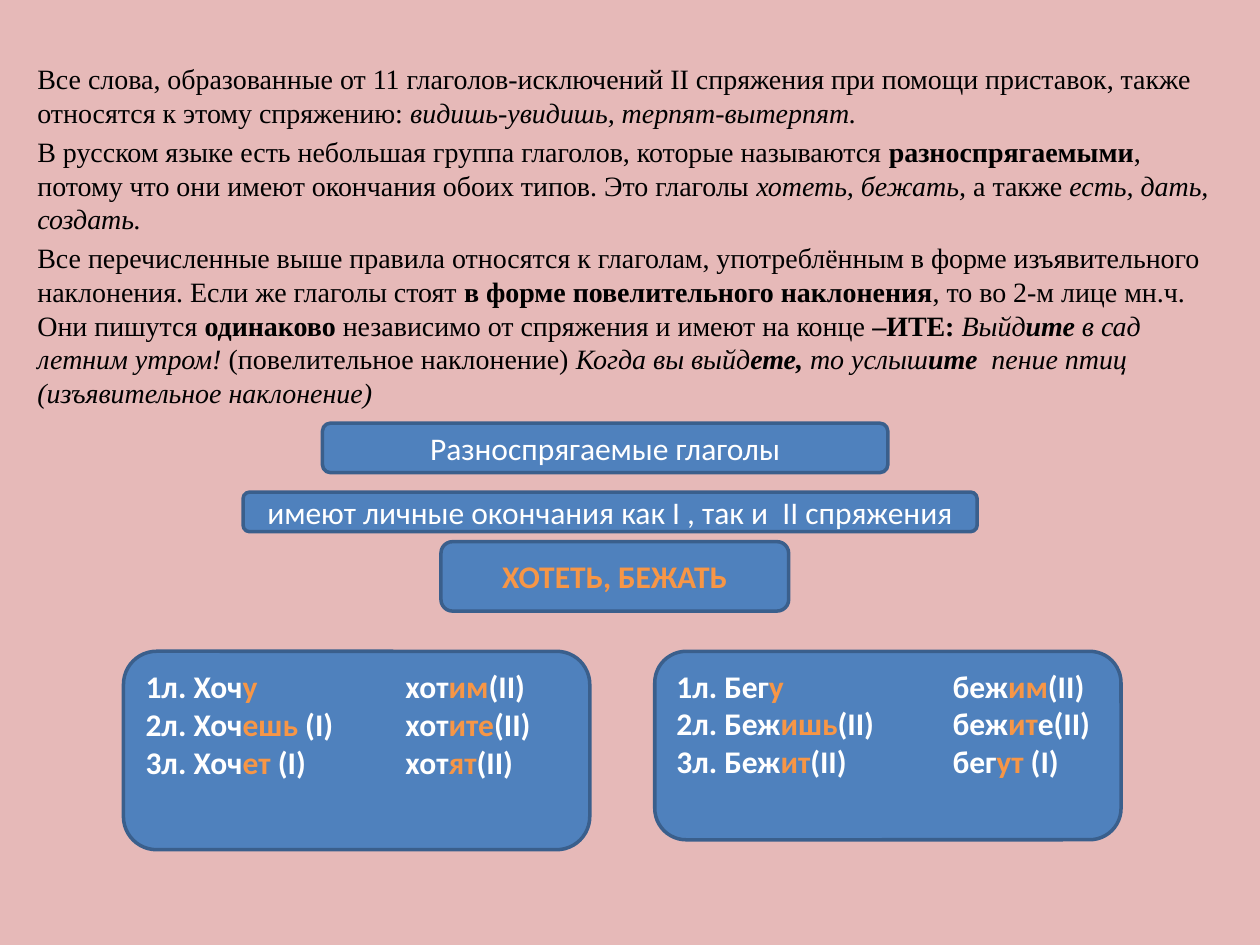
from pptx import Presentation
from pptx.dml.color import RGBColor
from pptx.enum.shapes import MSO_SHAPE
from pptx.enum.text import MSO_ANCHOR, MSO_AUTO_SIZE, PP_ALIGN
from pptx.oxml.ns import qn
from pptx.util import Cm, Pt
from lxml import etree

ROUNDED = MSO_SHAPE.ROUNDED_RECTANGLE
TOP, MIDDLE = MSO_ANCHOR.TOP, MSO_ANCHOR.MIDDLE
LEFT, CENTER = PP_ALIGN.LEFT, PP_ALIGN.CENTER
NO_AUTOFIT = MSO_AUTO_SIZE.NONE

PINK, BLUE, NAVY = "E6B9B8", "4F81BD", "3A5F8C"
WHITE, ORANGE, BLACK = "FFFFFF", "F79646", "000000"

RULES = [
    [("Все слова, образованные от 11 глаголов-исключений II спряжения при помощи приставок, "
      "также относятся к этому спряжению: ", ""),
     ("видишь-увидишь, терпят-вытерпят.", "i")],
    [("В русском языке есть небольшая группа глаголов, которые называются ", ""),
     ("разноспрягаемыми", "b"),
     (", потому что они имеют окончания обоих типов. Это глаголы ", ""),
     ("хотеть, бежать, ", "i"), ("а также ", ""), ("есть, дать, создать.", "i")],
    [("Все перечисленные выше правила относятся к глаголам, употреблённым в форме "
      "изъявительного наклонения. Если же глаголы стоят ", ""),
     ("в форме повелительного наклонения", "b"),
     (", то во 2-м лице мн.ч. Они пишутся ", ""), ("одинаково ", "b"),
     ("независимо от спряжения и имеют на конце ", ""), ("–ИТЕ: ", "b"),
     ("Выйд", "i"), ("ите", "bi"), (" в сад летним утром! ", "i"),
     ("(повелительное наклонение) ", ""), ("Когда вы выйд", "i"), ("ете, ", "bi"),
     ("то услыш", "i"), ("ите ", "bi"),
     (" пение птиц (изъявительное наклонение)", "i")],
]

BANNERS = [
    ("Разноспрягаемые глаголы", (6.5, 8.53, 11.4, 1.0), WHITE, False),
    ("имеют личные окончания как I , так и  II спряжения", (4.9, 9.92, 14.8, 0.8), WHITE, False),
    ("ХОТЕТЬ, БЕЖАТЬ", (8.89, 10.92, 7.01, 1.4), ORANGE, True),
]

VERBS = [
    ((2.49, 13.13, 9.4, 4.0), 5.24,
     ["1л. Хоч|у|\tхот|им|(II)", "2л. Хоч|ешь| (I)\tхот|ите|(II)", "3л. Хоч|ет| (I)\tхот|ят|(II)"]),
    ((13.2, 13.13, 9.4, 3.8), 5.57,
     ["1л. Бег|у|\tбеж|им|(II)", "2л. Беж|ишь|(II)\tбеж|ит|е(II)", "3л. Беж|ит|(II)\tбег|ут| (I)"]),
]


def color(value):
    return RGBColor.from_string(value)


def add_span(para, text, font="Calibri", size=18, fill=WHITE, bold=False, italic=False):
    span = para.add_run()
    span.text = text
    span.font.name, span.font.size = font, Pt(size)
    span.font.bold, span.font.italic = bold, italic
    span.font.color.rgb = color(fill)


def next_para(frame, index):
    return frame.add_paragraph() if index else frame.paragraphs[0]


class Builder:
    def __init__(self, deck):
        self.page = deck.slides.add_slide(deck.slide_layouts[1])
        self.page.background.fill.solid()
        self.page.background.fill.fore_color.rgb = color(PINK)
        title = self.page.shapes.title.element
        title.getparent().remove(title)

    def body(self, place, paragraphs):
        box = self.page.placeholders[1]
        box.left, box.top, box.width, box.height = map(Cm, place)
        frame = box.text_frame
        frame.word_wrap = True
        frame.auto_size = NO_AUTOFIT
        for index, spans in enumerate(paragraphs):
            para = next_para(frame, index)
            props = para._p.get_or_add_pPr()
            props.set("marL", "0")
            props.set("indent", "0")
            etree.SubElement(props, qn("a:buNone"))
            para.space_before = Pt(3.2 if index else 0)
            for text, style in spans:
                add_span(para, text, font="Times New Roman", size=16, fill=BLACK,
                         bold="b" in style, italic="i" in style)

    def panel(self, place, anchor):
        box = self.page.shapes.add_shape(ROUNDED, *map(Cm, place))
        box.shadow.inherit = False
        box.fill.solid()
        box.fill.fore_color.rgb = color(BLUE)
        box.line.color.rgb = color(NAVY)
        box.line.width = Pt(2)
        box.text_frame.word_wrap = True
        box.text_frame.vertical_anchor = anchor
        return box.text_frame

    def banner(self, text, place, fill, bold):
        para = self.panel(place, MIDDLE).paragraphs[0]
        para.alignment = CENTER
        add_span(para, text, fill=fill, bold=bold)

    def verb(self, place, tab, lines):
        frame = self.panel(place, TOP)
        for index, line in enumerate(lines):
            para = next_para(frame, index)
            tabs = etree.SubElement(para._p.get_or_add_pPr(), qn("a:tabLst"))
            etree.SubElement(tabs, qn("a:tab"), pos=str(Cm(tab)), algn="l")
            para.alignment = LEFT
            for position, text in enumerate(line.split("|")):
                add_span(para, text, fill=ORANGE if position % 2 else WHITE, bold=True)


def main():
    deck = Presentation()
    deck.slide_width, deck.slide_height = Cm(25.4), Cm(19.05)
    builder = Builder(deck)
    builder.body((0.5, 1.12, 24.6, 17.4), RULES)
    for banner in BANNERS:
        builder.banner(*banner)
    for verb in VERBS:
        builder.verb(*verb)
    deck.save("out.pptx")


if __name__ == "__main__":
    main()
